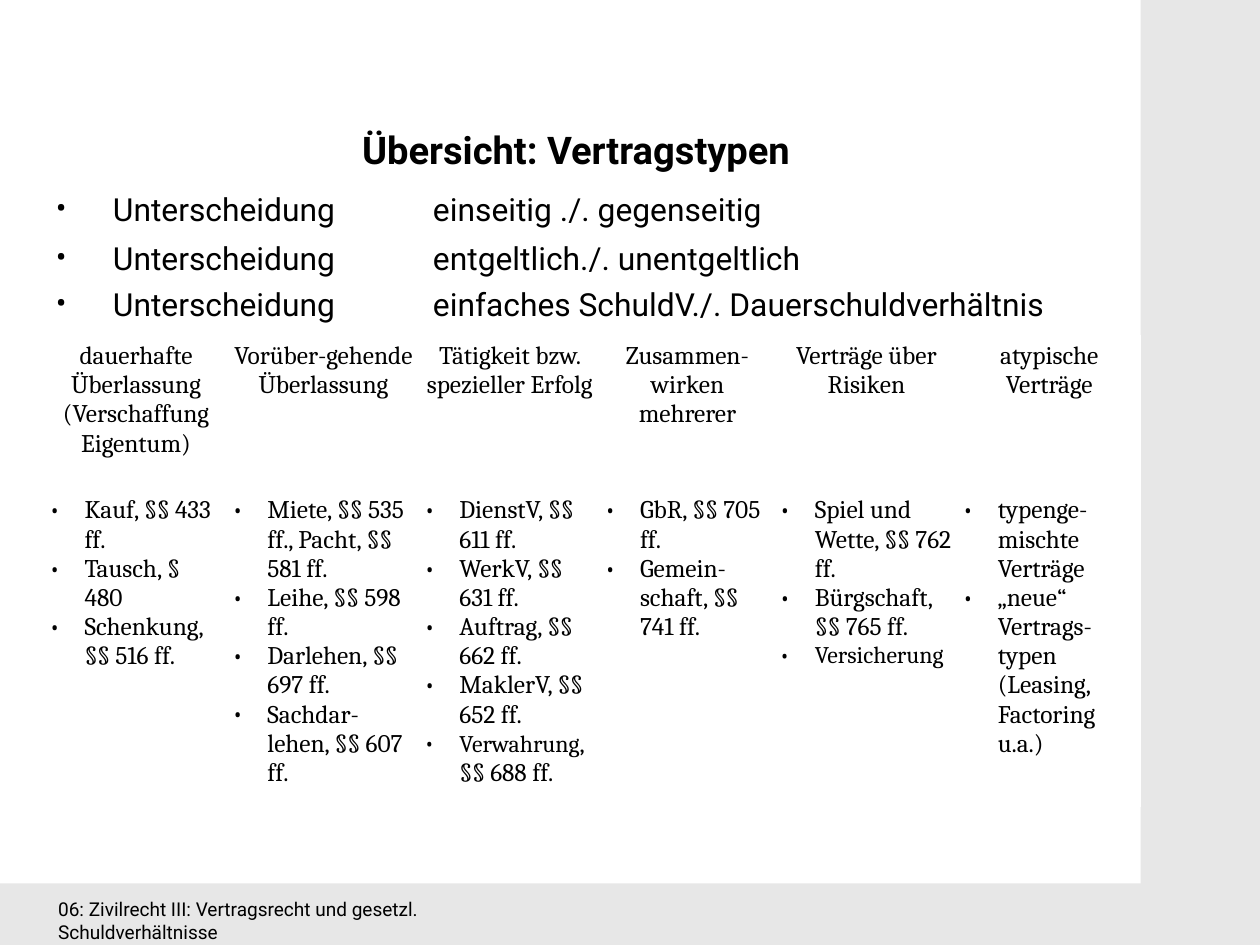
from lxml import etree
from pptx import Presentation
from pptx.dml.color import RGBColor
from pptx.enum import shapes, text
from pptx.oxml.ns import qn
from pptx.util import Inches, Pt

COLORS = {"backdrop": "E7E7E7", "panel": "FFFFFF", "ink": "000000"}
BLACK = RGBColor.from_string(COLORS["ink"])
WHITE = RGBColor.from_string(COLORS["panel"])
CM_PER_INCH = 2.54

DISTINCTIONS = [
    (1.61, "einseitig ./. gegenseitig"),
    (2.04, "entgeltlich./. unentgeltlich"),
    (2.44, "einfaches SchuldV./. Dauerschuldverhältnis"),
]
CONTRACT_TYPES = [
    (1.6, "dauerhafte Überlassung (Verschaffung Eigentum)",
     ["Kauf, §§ 433 ff.", "Tausch, § 480", "Schenkung, §§ 516 ff."]),
    (1.68, "Vorüber-gehende Überlassung",
     ["Miete, §§ 535 ff., Pacht, §§ 581 ff.", "Leihe, §§ 598 ff.",
      "Darlehen, §§ 697 ff.", "Sachdar-lehen, §§ 607 ff."]),
    (1.58, "Tätigkeit bzw. spezieller Erfolg",
     ["DienstV, §§ 611 ff.", "WerkV, §§ 631 ff.", "Auftrag, §§ 662 ff.",
      "MaklerV, §§ 652 ff.", "Verwahrung, §§ 688 ff."]),
    (1.53, "Zusammen-wirken mehrerer",
     ["GbR, §§ 705 ff.", "Gemein-schaft, §§ 741 ff."]),
    (1.6, "Verträge über Risiken",
     ["Spiel und Wette, §§ 762 ff.", "Bürgschaft, §§ 765 ff.", "Versicherung"]),
    (1.6, "atypische Verträge",
     ["typenge-mischte Verträge",
      "„neue“ Vertrags-typen (Leasing, Factoring u.a.)"]),
]
SMALLER_WORDS = {"Verwahrung", "Versicherung"}


def add_bullet(para, indent, font, tab=None):
    """Give a paragraph a hanging bullet and, if wanted, one tab stop."""
    props = para._p.get_or_add_pPr()
    props.set("marL", str(Inches(indent)))
    props.set("indent", str(-Inches(indent)))
    etree.SubElement(props, qn("a:buFont"), typeface=font)
    etree.SubElement(props, qn("a:buChar"), char="•")
    if tab:
        stops = etree.SubElement(props, qn("a:tabLst"))
        etree.SubElement(stops, qn("a:tab"), pos=str(Inches(tab)), algn="l")


def style_runs(para, font, size, bold=False):
    for span in para.runs:
        span.font.name = font
        span.font.size = Pt(size)
        span.font.bold = bold
        span.font.color.rgb = BLACK


deck = Presentation()
deck.slide_width = Inches(28 / CM_PER_INCH)
deck.slide_height = Inches(21 / CM_PER_INCH)
page = deck.slides.add_slide(deck.slide_layouts[6])
page.background.fill.solid()
page.background.fill.fore_color.rgb = RGBColor.from_string(COLORS["backdrop"])

panel = page.shapes.add_shape(
    shapes.MSO_SHAPE.RECTANGLE, 0, 0, Inches(9.98), Inches(7.73))
panel.shadow.inherit = False
panel.fill.solid()
panel.fill.fore_color.rgb = WHITE
panel.line.fill.background()

# Title, distinctions and footer: left, top, width, height, size, wording
text_lines = [(0.03, 1.06, 10.02, 0.51, 24, "Übersicht: Vertragstypen")]
for top, contrast in DISTINCTIONS:
    text_lines.append((0.39, top, 10.24, 0.44, 20, "Unterscheidung \t" + contrast))
text_lines.append((0.41, 7.8, 4.72, 0.3, 12,
                   "06: Zivilrecht III: Vertragsrecht und gesetzl. Schuldverhältnisse"))

for left, top, width, height, size, wording in text_lines:
    box = page.shapes.add_textbox(
        Inches(left), Inches(top), Inches(width), Inches(height))
    box.text_frame.word_wrap = True
    para = box.text_frame.paragraphs[0]
    para.text = wording
    if size == 24:
        para.alignment = text.PP_ALIGN.CENTER
    elif size == 20:
        add_bullet(para, 0.5, "Roboto", tab=3.3)
    style_runs(para, "Roboto", size, bold=size == 24)

# Table of contract types
table = page.shapes.add_table(
    2, len(CONTRACT_TYPES), Inches(0.39), Inches(2.94),
    Inches(9.57), Inches(4.12)).table
table.first_row = False
table.horz_banding = False
table.rows[0].height, table.rows[1].height = Inches(1.35), Inches(2.61)

for column, (width, heading, examples) in enumerate(CONTRACT_TYPES):
    table.columns[column].width = Inches(width)
    for row, entries in enumerate([[heading], examples]):
        cell = table.cell(row, column)
        cell.fill.solid()
        cell.fill.fore_color.rgb = WHITE
        cell.margin_left = cell.margin_right = Inches(0.04)
        cell.margin_top = cell.margin_bottom = Inches(0.05)
        cell.text_frame.text = "\n".join(entries)
        for para, entry in zip(cell.text_frame.paragraphs, entries):
            if row == 0:
                para.alignment = text.PP_ALIGN.CENTER
            else:
                add_bullet(para, 0.31, "Cambria")
            word, comma, rest = entry.partition(",")
            if word in SMALLER_WORDS:
                para.text = word
                if rest:
                    para.add_run().text = comma + rest
            style_runs(para, "Cambria", 16)
            if word in SMALLER_WORDS:
                para.runs[0].font.size = Pt(15)

deck.save("out.pptx")
